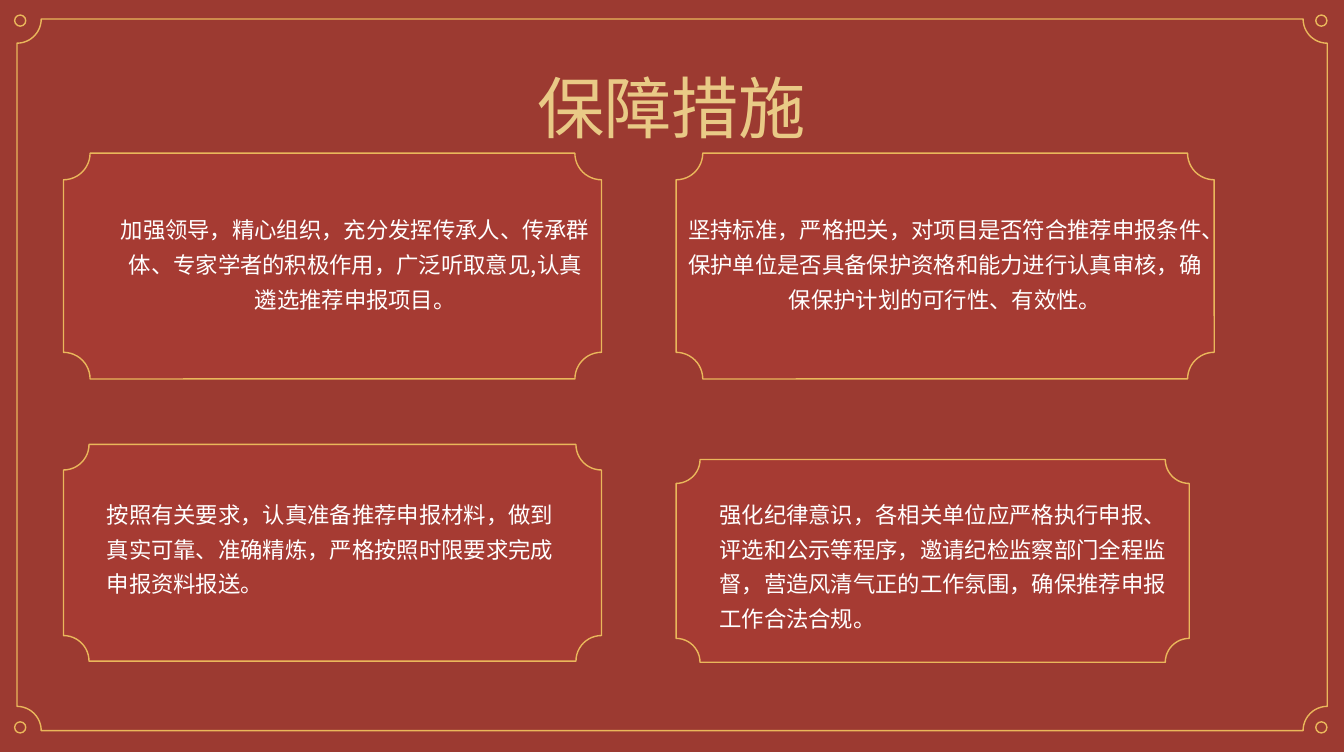
from itertools import product

from lxml import etree
from pptx import Presentation
from pptx.dml.color import RGBColor
from pptx.enum.shapes import MSO_SHAPE as Shape
from pptx.enum.text import MSO_AUTO_SIZE as AutoSize, PP_ALIGN as Align
from pptx.oxml.ns import qn
from pptx.util import Cm, Pt

FONT = "Noto Sans CJK SC"
GOLD, PALE_GOLD, WHITE = "EAB75B", "E9CA86", "FFFFFF"
BACKDROP_RED, CARD_RED = "9C3A31", "A63B33"
WIDTH, HEIGHT = 33.87, 19.05
LEFT_COLUMN, RIGHT_COLUMN = 1.6, 17.04

MEASURES = [
    ((LEFT_COLUMN, 3.86, 13.56, 5.69), (1.12, 1.27, 12.47, 2.92), Align.CENTER,
     "加强领导，精心组织，充分发挥传承人、传承群体、专家学者的积极作用，广泛听取意见,认真遴选推荐申报项目。"),
    ((RIGHT_COLUMN, 3.86, 13.56, 5.69), (0, 1.27, 13.56, 2.92), Align.CENTER,
     "坚持标准，严格把关，对项目是否符合推荐申报条件、保护单位是否具备保护资格和能力进行认真审核，确保保护计划的可行性、有效性。"),
    ((LEFT_COLUMN, 11.2, 13.56, 5.46), (0.84, 1.09, 11.91, 2.92), Align.LEFT,
     "按照有关要求，认真准备推荐申报材料，做到真实可靠、准确精炼，严格按照时限要求完成申报资料报送。"),
    ((RIGHT_COLUMN, 11.58, 12.93, 5.11), (0.84, 0.71, 11.91, 3.81), Align.LEFT,
     "强化纪律意识，各相关单位应严格执行申报、评选和公示等程序，邀请纪检监察部门全程监督，营造风清气正的工作氛围，确保推荐申报工作合法合规。"),
]


def color(hex_code):
    """Turn a hex string into a colour."""
    return RGBColor.from_string(hex_code)


def add_figure(slide, preset, box, fill=None, line=None, notch=None):
    """Place a preset shape with optional fill, outline and corner notch."""
    figure = slide.shapes.add_shape(preset, *map(Cm, box))
    figure.shadow.inherit = False
    if fill:
        figure.fill.solid()
        figure.fill.fore_color.rgb = color(fill)
    else:
        figure.fill.background()
    if line:
        figure.line.color.rgb = color(line)
        figure.line.width = Pt(1)
    else:
        figure.line.fill.background()
    if notch:
        figure.adjustments[0] = notch


def add_text(slide, box, wording, size, hex_code, align, spacing=None):
    """Place one wrapped paragraph."""
    frame = slide.shapes.add_textbox(*map(Cm, box)).text_frame
    frame.word_wrap = True
    frame.auto_size = AutoSize.SHAPE_TO_FIT_TEXT
    frame.text = wording
    paragraph = frame.paragraphs[0]
    paragraph.alignment = align
    paragraph.line_spacing = spacing
    run = paragraph.runs[0]
    run.font.size = Pt(size)
    run.font.name = FONT
    run.font.color.rgb = color(hex_code)
    etree.SubElement(run.font._element, qn("a:ea"), typeface=FONT)


def add_backdrop(slide, box):
    """Draw the red ground, the notched frame and its corner rings."""
    left, top, width, height = box
    add_figure(slide, Shape.RECTANGLE, box, fill=BACKDROP_RED)
    add_figure(slide, Shape.PLAQUE, (left + 0.43, top + 0.58, width - 0.85, height - 1.12),
               line=GOLD, notch=0.034)
    ring = 0.28
    ring_lefts = left + 0.37, left + width - 0.71
    ring_tops = top + 0.48, top + height - 0.76
    for ring_top, ring_left in product(ring_tops, ring_lefts):
        add_figure(slide, Shape.OVAL, (ring_left, ring_top, ring, ring), line=GOLD)


def add_measure(slide, box, inset, align, wording):
    """Draw a notched card with its text placed relative to the card."""
    left, top, _, _ = box
    text_left, text_top, text_width, text_height = inset
    add_figure(slide, Shape.PLAQUE, box, fill=CARD_RED, line=GOLD, notch=0.118)
    add_text(slide, (left + text_left, top + text_top, text_width, text_height),
             wording, 16, WHITE, align, spacing=1.3)


def main():
    """Build and save the slide."""
    deck = Presentation()
    deck.slide_width, deck.slide_height = Cm(WIDTH), Cm(HEIGHT)
    slide = deck.slides.add_slide(deck.slide_layouts[6])
    add_backdrop(slide, (0, -0.1, WIDTH, HEIGHT))
    add_text(slide, (11.99, 1.55, 9.86, 2.31), "保障措施", 48, PALE_GOLD, Align.CENTER)
    for measure in MEASURES:
        add_measure(slide, *measure)
    deck.save("out.pptx")


if __name__ == "__main__":
    main()
